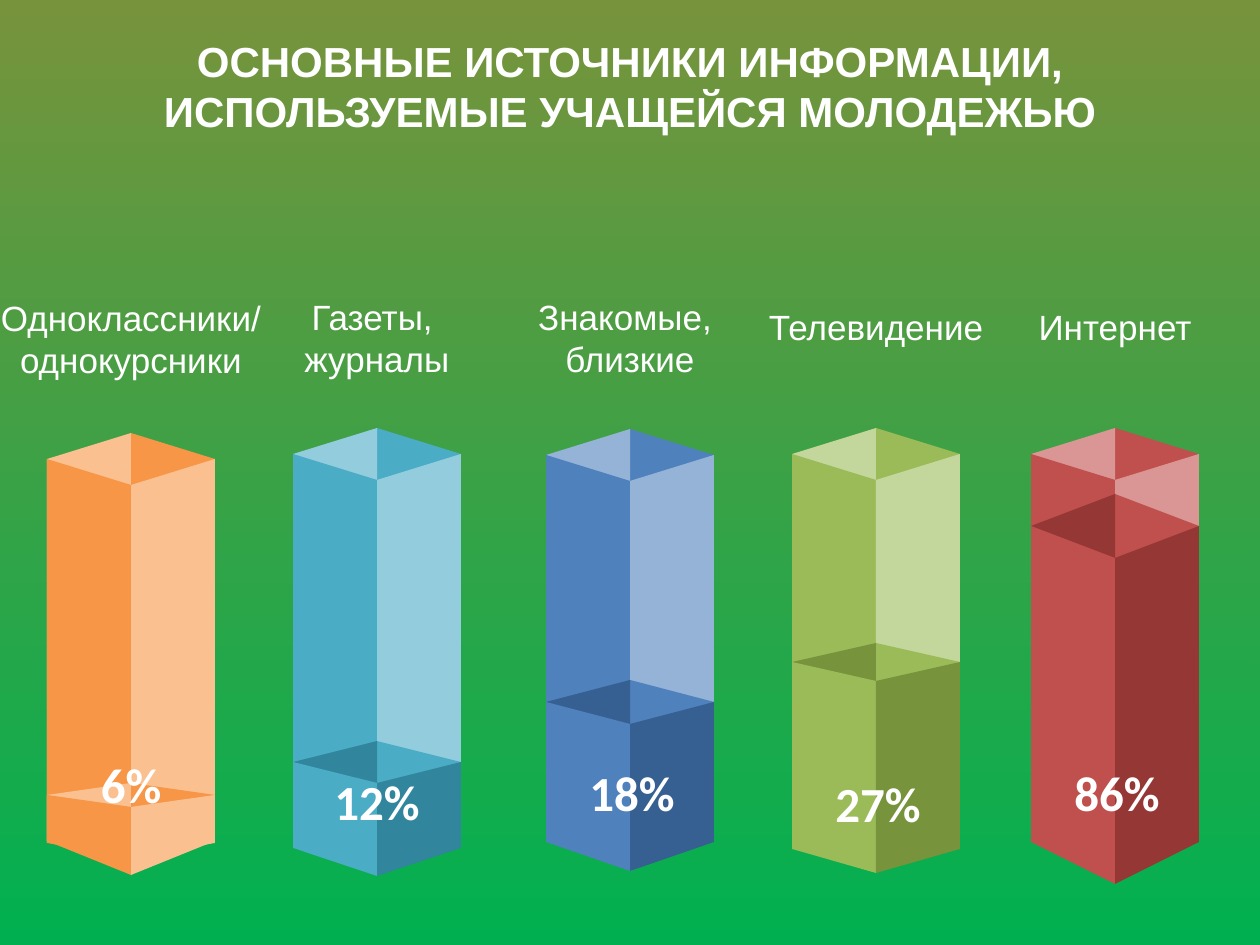
from collections import namedtuple

from pptx import Presentation
from pptx.dml.color import RGBColor
from pptx.enum.shapes import MSO_SHAPE as Shape
from pptx.enum.text import MSO_ANCHOR as Anchor, MSO_AUTO_SIZE as AutoSize, PP_ALIGN as Align
from pptx.util import Emu, Inches, Pt

EMU_PER_PX = 914400 / 126
HALF_WIDTH = 84

WHITE = RGBColor(0xFF, 0xFF, 0xFF)
GREEN = RGBColor(0x00, 0xB0, 0x50)
OLIVE = RGBColor(0x77, 0x93, 0x3C)
RED = RGBColor(0xC0, 0x50, 0x4D)
RED_LIGHT = RGBColor(0xD9, 0x96, 0x94)
RED_DARK = RGBColor(0x95, 0x37, 0x35)
LIME = RGBColor(0x9B, 0xBB, 0x59)
LIME_LIGHT = RGBColor(0xC3, 0xD6, 0x9B)
BLUE = RGBColor(0x4F, 0x81, 0xBD)
BLUE_LIGHT = RGBColor(0x95, 0xB3, 0xD7)
BLUE_DARK = RGBColor(0x37, 0x60, 0x92)
TEAL = RGBColor(0x4B, 0xAC, 0xC6)
TEAL_LIGHT = RGBColor(0x93, 0xCD, 0xDD)
TEAL_DARK = RGBColor(0x31, 0x85, 0x9C)
ORANGE = RGBColor(0xF7, 0x96, 0x46)
ORANGE_LIGHT = RGBColor(0xFA, 0xC0, 0x90)

# level: heights of the filled part at back corner, sides, lower sides, lower front
Column = namedtuple("Column", "center top level main light dark value value_at caption caption_box")
COLUMNS = [
    Column(1115, 428, (494, 526, 842, 884), RED, RED_LIGHT, RED_DARK,
           "86%", (1117, 756, 112), ["Интернет"], (287, 446, 78)),
    Column(876, 428, (643, 662, 849, 873), LIME, LIME_LIGHT, OLIVE,
           "27%", (878, 767, 112), ["Телевидение"], (287, 446, 78)),
    Column(630, 429, (680, 702, 842, 871), BLUE, BLUE_LIGHT, BLUE_DARK,
           "18%", (632, 756, 112), ["Знакомые, ", "близкие"], (290, 355, 95)),
    Column(377, 428, (741, 762, 848, 876), TEAL, TEAL_LIGHT, TEAL_DARK,
           "12%", (377, 765, 112), ["Газеты, ", "журналы"], (290, 355, 95)),
    Column(131, 433, (783, 795, 843, 859), ORANGE, ORANGE_LIGHT, ORANGE_LIGHT,
           "6%", (131, 748, 90), ["Одноклассники/", "однокурсники"], (289, 478, 100)),
]


def px(length):
    return Emu(round(length * EMU_PER_PX))


class SlidePainter:
    def __init__(self, slide):
        self.slide = slide
        self.shapes = slide.shapes

    def background(self, bottom, top):
        box = self.shapes.add_shape(Shape.RECTANGLE, 0, 0, px(1261), px(945))
        box.shadow.inherit = False
        box.line.fill.background()
        box.fill.gradient()
        box.fill.gradient_angle = 90
        for stop, color in zip(box.fill.gradient_stops, (bottom, top)):
            stop.color.rgb = color

    def style(self, para, size, font, bold):
        para.alignment = Align.CENTER
        para.font.size = Pt(size)
        para.font.name = font
        para.font.bold = bold
        para.font.color.rgb = WHITE

    def title(self, text, left, top, width, height):
        title = self.shapes.title
        title.left, title.top, title.width, title.height = map(px, (left, top, width, height))
        frame = title.text_frame
        frame.text = text
        frame.vertical_anchor = Anchor.TOP
        frame.auto_size = AutoSize.NONE
        self.style(frame.paragraphs[0], 24, "Arial", True)
        # Bring the title in front of the background
        title.element.getparent().append(title.element)

    def label(self, lines, center, top, width, height, size, font, bold=False, wrap=True):
        box = self.shapes.add_textbox(px(center - width / 2), px(top), px(width), px(height))
        frame = box.text_frame
        frame.text = "\n".join(lines)
        frame.word_wrap = wrap
        frame.auto_size = AutoSize.NONE if wrap else AutoSize.SHAPE_TO_FIT_TEXT
        frame.vertical_anchor = Anchor.MIDDLE if wrap else Anchor.TOP
        for para in frame.paragraphs:
            self.style(para, size, font, bold)

    def panel(self, points, color):
        builder = self.shapes.build_freeform(*points[0], scale=EMU_PER_PX)
        builder.add_line_segments(points[1:], close=True)
        panel = builder.convert_to_shape()
        panel.shadow.inherit = False
        panel.fill.solid()
        panel.fill.fore_color.rgb = color
        panel.line.fill.background()

    def prism(self, center, back, side, side_bottom, front_bottom, main, tint):
        front = 2 * side - back
        back_bottom = 2 * side_bottom - front_bottom
        walls = [(1, back, back_bottom, main), (-1, back, back_bottom, tint),
                 (-1, front, front_bottom, main), (1, front, front_bottom, tint)]
        for direction, top, bottom, color in walls:
            edge = center + direction * HALF_WIDTH
            self.panel([(edge, side_bottom), (center, bottom), (center, top), (edge, side)], color)


def main():
    deck = Presentation()
    deck.slide_width, deck.slide_height = Inches(10), Inches(7.5)
    painter = SlidePainter(deck.slides.add_slide(deck.slide_layouts[5]))

    painter.background(GREEN, OLIVE)

    # Glass columns with their filled part and value
    for column in COLUMNS:
        top = column.top
        painter.prism(column.center, top, top + 26, top + 408, top + 442, column.main, column.light)
        painter.prism(column.center, *column.level, column.main, column.dark)
        painter.label([column.value], *column.value_at, 72, 28, "Calibri", bold=True, wrap=False)

    # Captions above the columns
    for column in reversed(COLUMNS):
        painter.label(column.caption, column.center, *column.caption_box, 20, "Arial")

    painter.title("ОСНОВНЫЕ ИСТОЧНИКИ ИНФОРМАЦИИ, ИСПОЛЬЗУЕМЫЕ УЧАЩЕЙСЯ МОЛОДЕЖЬЮ", 10, 29, 1240, 158)
    deck.save("out.pptx")


if __name__ == "__main__":
    main()
